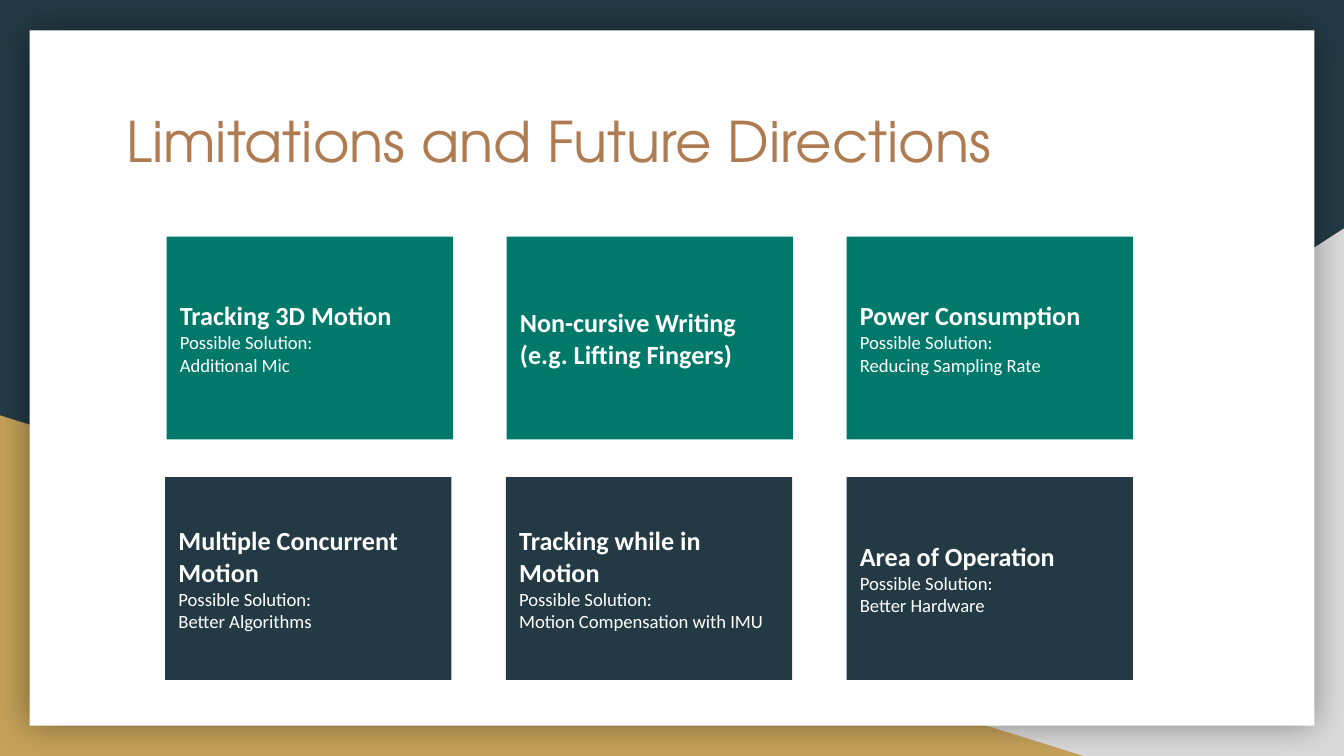
from dataclasses import dataclass

from lxml import etree
from pptx import Presentation
from pptx.dml.color import RGBColor
from pptx.enum.shapes import MSO_SHAPE
from pptx.enum.text import MSO_ANCHOR, MSO_AUTO_SIZE, PP_ALIGN
from pptx.oxml.ns import qn
from pptx.util import Inches, Pt

RECT, TRIANGLE = MSO_SHAPE.RECTANGLE, MSO_SHAPE.RIGHT_TRIANGLE
TOP, MIDDLE = MSO_ANCHOR.TOP, MSO_ANCHOR.MIDDLE
LEFT = PP_ALIGN.LEFT
NO_FIT = MSO_AUTO_SIZE.NONE
TITLE_ONLY = 5


@dataclass(frozen=True)
class Theme:
    navy: str = "233A44"
    green: str = "00796B"
    gold: str = "C4A15A"
    grey: str = "D9D9D9"
    white: str = "FFFFFF"
    copper: str = "AF7B51"
    title_font: str = "TeX Gyre Adventor"
    body_font: str = "Calibri"
    title_size: int = 30
    head_size: int = 14
    note_size: int = 10


THEME = Theme()
WIDTH, HEIGHT = 10, 5.625

# Card grid: each row has a left edge, column step, top and colour
CARD_W, CARD_H = 2.13, 1.51
ROWS = [(1.24, 2.53, 1.76, THEME.green), (1.23, 2.535, 3.55, THEME.navy)]

# Each card: heading lines, then the possible solution
CARDS = [
    [
        (["Tracking 3D Motion"], "Additional Mic"),
        (["Non-cursive Writing", "(e.g. Lifting Fingers)"], None),
        (["Power Consumption"], "Reducing Sampling Rate"),
    ],
    [
        (["Multiple Concurrent Motion"], "Better Algorithms"),
        (["Tracking while in Motion"], "Motion Compensation with IMU"),
        (["Area of Operation"], "Better Hardware"),
    ],
]


def add_block(s, kind, box, color):
    """Add a plain filled shape without outline or shadow."""
    sp = s.shapes.add_shape(kind, *map(Inches, box))
    sp.shadow.inherit = False
    sp.fill.solid()
    sp.fill.fore_color.rgb = RGBColor.from_string(color)
    sp.line.fill.background()
    return sp


def add_glow(sp, blur, opacity):
    """Put a soft black shadow evenly around a shape."""
    effects = sp._element.spPr.find(qn("a:effectLst"))
    shadow = etree.SubElement(effects, qn("a:outerShdw"), blurRad=str(Pt(blur)),
                              dist="0", dir="0", algn="ctr", rotWithShape="0")
    black = etree.SubElement(shadow, qn("a:srgbClr"), val="000000")
    etree.SubElement(black, qn("a:alpha"), val=str(opacity * 1000))


def write_lines(sp, lines, anchor):
    """Fill a shape with (text, size, font, colour, bold) paragraphs."""
    tf = sp.text_frame
    tf.word_wrap = True
    tf.auto_size = NO_FIT
    tf.vertical_anchor = anchor
    tf.margin_left = tf.margin_right = Inches(0.1)
    tf.margin_top = tf.margin_bottom = Inches(0.1)
    for i, (text, size, font, color, bold) in enumerate(lines):
        p = tf.add_paragraph() if i else tf.paragraphs[0]
        p.alignment = LEFT
        r = p.add_run()
        r.text = text
        r.font.size = Pt(size)
        r.font.name = font
        r.font.bold = bold
        r.font.color.rgb = RGBColor.from_string(color)


def add_backdrop(s):
    """Dark page with two corner wedges and a white panel."""
    s.background.fill.solid()
    s.background.fill.fore_color.rgb = RGBColor.from_string(THEME.navy)
    wedge = add_block(s, TRIANGLE, (3.92, 1.7, WIDTH - 3.92, HEIGHT - 1.7), THEME.grey)
    wedge._element.spPr.find(qn("a:xfrm")).set("flipH", "1")
    add_block(s, TRIANGLE, (0, 3.09, 8.06, HEIGHT - 3.09), THEME.gold)
    panel = add_block(s, RECT, (0.22, 0.225, WIDTH - 0.44, HEIGHT - 0.45), THEME.white)
    add_glow(panel, blur=18, opacity=40)


def set_title(s, text):
    sp = s.shapes.title
    sp.left, sp.top, sp.width, sp.height = map(Inches, (0.84, 0.69, 8.21, 1.04))
    write_lines(sp, [(text, THEME.title_size, THEME.title_font, THEME.copper, False)], TOP)
    # Bring the title in front of the panel
    sp._element.getparent().append(sp._element)


def add_card(s, row, col, heading, solution):
    left, step, top, color = ROWS[row]
    sp = add_block(s, RECT, (left + col * step, top, CARD_W, CARD_H), color)
    notes = ["Possible Solution:", solution] if solution else []
    lines = [(t, THEME.head_size, THEME.body_font, THEME.white, True) for t in heading]
    lines += [(t, THEME.note_size, THEME.body_font, THEME.white, False) for t in notes]
    write_lines(sp, lines, MIDDLE)


def main():
    prs = Presentation()
    prs.slide_width, prs.slide_height = Inches(WIDTH), Inches(HEIGHT)
    s = prs.slides.add_slide(prs.slide_layouts[TITLE_ONLY])
    add_backdrop(s)
    set_title(s, "Limitations and Future Directions")
    for row, cards in enumerate(CARDS):
        for col, (heading, solution) in enumerate(cards):
            add_card(s, row, col, heading, solution)
    prs.save("out.pptx")


if __name__ == "__main__":
    main()
